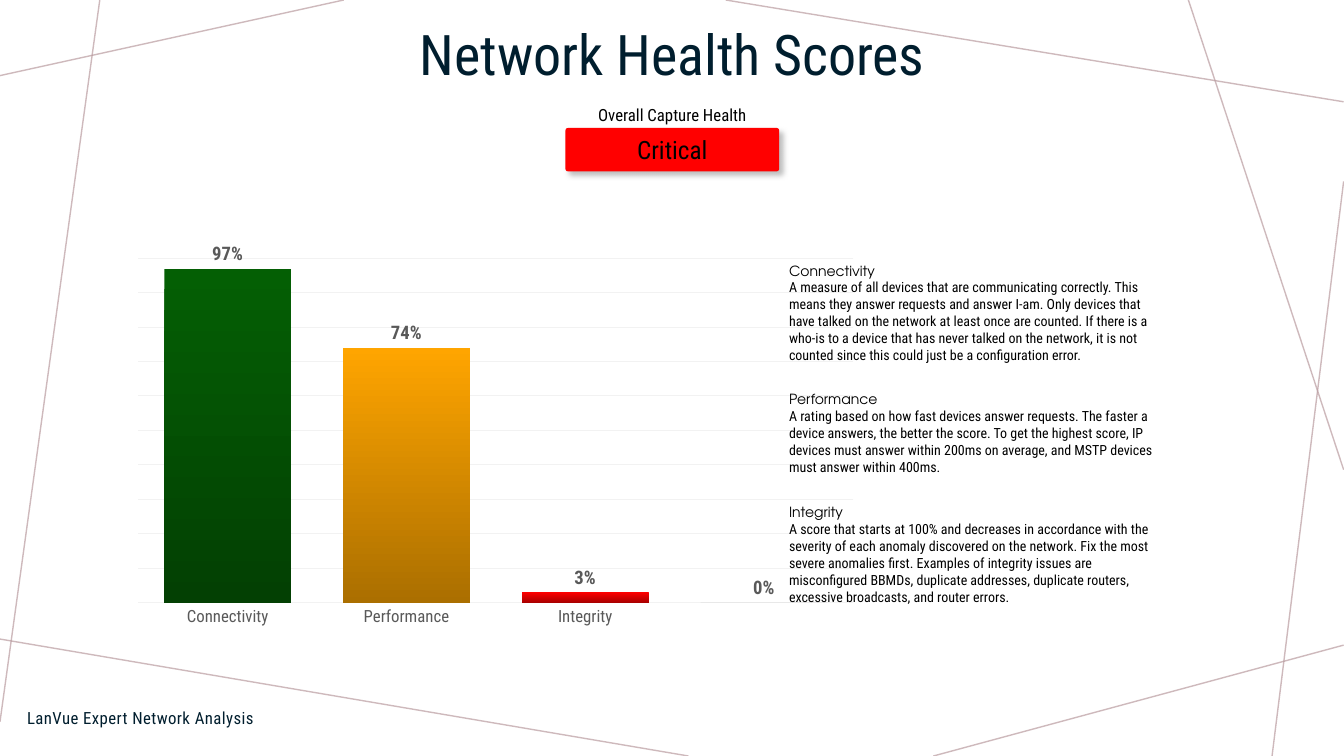
"""Build the network health scores slide."""
import pptx
import pptx.chart.data
import pptx.dml.color
import pptx.enum.chart
import pptx.enum.shapes
import pptx.enum.text
import pptx.oxml
import pptx.oxml.ns
import pptx.util
from lxml import etree

Inches = pptx.util.Inches
Pt = pptx.util.Pt
qn = pptx.oxml.ns.qn
FONT = "Roboto Condensed"
HEAD = "TeX Gyre Adventor"
COLORS = {
    "navy": "001E2E", "black": "000000", "gray": "595959", "mauve": "BA9CA0",
    "grid": "F2F2F2", "red": "FF0000", "shade": "BFBFBF", "bar": "A6A6A6",
}
RAYS = [
    (3.41, 0, 0, 0.75), (0.99, 0, 0, 7.16), (6.83, 7.5, 0, 6.34),
    (13.33, 6.4, 9.26, 7.5), (13.33, 1.8, 12.62, 7.5),
    (13.33, 4.66, 11.79, 0), (13.33, 1.01, 7.2, 0),
]
SCORES = [
    ("Connectivity", 0.97, ("045F04", "034003")),
    ("Performance", 0.74, ("FFA500", "AB6F00")),
    ("Integrity", 0.03, ("FF0000", "AB0000")),
]
NOTES = [
    (2.55, 1.11, "Connectivity",
     "A measure of all devices that are communicating correctly. This means "
     "they answer requests and answer I-am. Only devices that have talked on "
     "the network at least once are counted. If there is a who-is to a device "
     "that has never talked on the network, it is not counted since this could "
     "just be a configuration error."),
    (3.83, 0.94, "Performance",
     "A rating based on how fast devices answer requests. The faster a device "
     "answers, the better the score. To get the highest score, IP devices must "
     "answer within 200ms on average, and MSTP devices must answer within 400ms."),
    (4.95, 1.11, "Integrity",
     "A score that starts at 100% and decreases in accordance with the severity "
     "of each anomaly discovered on the network. Fix the most severe anomalies "
     "first. Examples of integrity issues are misconfigured BBMDs, duplicate "
     "addresses, duplicate routers, excessive broadcasts, and router errors."),
]


def rgb(name):
    """Return a named or hex colour."""
    return pptx.dml.color.RGBColor.from_string(COLORS.get(name, name))


def style(font, size, color, name=FONT, bold=False):
    """Format a font."""
    font.size = Pt(size)
    font.name = name
    font.bold = bold
    font.color.rgb = rgb(color)


def write(para, text, size=10, color="black", name=FONT, center=False, track=0):
    """Put formatted text in a paragraph."""
    align = pptx.enum.text.PP_ALIGN
    para.alignment = align.CENTER if center else align.LEFT
    run = para.add_run()
    run.text = text
    style(run.font, size, color, name)
    if track:
        run.font._element.set("spc", str(track))


def add_box(slide, left, top, width, height, middle=False):
    """Add a wrapping text box and return its frame."""
    box = slide.shapes.add_textbox(
        Inches(left), Inches(top), Inches(width), Inches(height))
    frame = box.text_frame
    frame.word_wrap = True
    if middle:
        frame.vertical_anchor = pptx.enum.text.MSO_ANCHOR.MIDDLE
    return frame


def add_ray(slide, ends):
    """Draw one thin background line."""
    line = slide.shapes.add_connector(
        pptx.enum.shapes.MSO_CONNECTOR.STRAIGHT, *map(Inches, ends))
    line.line.width = Pt(1)
    line.line.color.rgb = rgb("mauve")
    props = line._element.spPr
    tint = next(props.iter(qn("a:srgbClr")))
    etree.SubElement(tint, qn("a:alpha"), val="70000")
    etree.SubElement(props, qn("a:effectLst"))


def add_title(slide, text):
    """Place and fill the title."""
    title = slide.shapes.title
    title.left, title.top = Inches(3.96), Inches(0.17)
    title.width, title.height = Inches(5.42), Inches(0.8)
    title.text_frame.vertical_anchor = pptx.enum.text.MSO_ANCHOR.MIDDLE
    para = title.text_frame.paragraphs[0]
    para.line_spacing = 0.9
    write(para, text, size=40, color="navy", center=True)


def add_badge(slide, text):
    """Draw the status badge with its soft shadow."""
    badge = slide.shapes.add_shape(
        pptx.enum.shapes.MSO_SHAPE.ROUNDED_RECTANGLE,
        Inches(5.61), Inches(1.27), Inches(2.12), Inches(0.43))
    badge.adjustments[0] = 0.056
    badge.fill.solid()
    badge.fill.fore_color.rgb = rgb("red")
    badge.line.fill.background()
    badge.shadow.inherit = False
    glow = badge._element.spPr.find(qn("a:effectLst"))
    drop = etree.SubElement(
        glow, qn("a:outerShdw"), blurRad=str(Pt(4)), dist=str(Pt(4)),
        dir="2700000", algn="tl", rotWithShape="0")
    etree.SubElement(drop, qn("a:srgbClr"), val=COLORS["shade"])
    badge.text_frame.vertical_anchor = pptx.enum.text.MSO_ANCHOR.MIDDLE
    write(badge.text_frame.paragraphs[0], text, size=18, center=True)


def set_plot(chart, **place):
    """Fix the inner plot area and draw a missing score as zero."""
    root = chart._chartSpace.chart
    root.find(qn("c:dispBlanksAs")).set("val", "zero")
    area = root.plotArea
    for old in area.findall(qn("c:layout")):
        area.remove(old)
    layout = etree.Element(qn("c:layout"))
    area.insert(0, layout)
    manual = etree.SubElement(layout, qn("c:manualLayout"))
    parts = {"layoutTarget": "inner", "xMode": "edge", "yMode": "edge", **place}
    for tag, value in parts.items():
        etree.SubElement(manual, qn("c:" + tag), val=str(value))


def add_scores(slide):
    """Add the score column chart, with one unnamed empty slot at its end."""
    enum = pptx.enum.chart
    data = pptx.chart.data.CategoryChartData(number_format="0%")
    data.categories = [name for name, _, _ in SCORES]
    data.add_series("Series 1", [value for _, value, _ in SCORES] + [None])
    chart = slide.shapes.add_chart(
        enum.XL_CHART_TYPE.COLUMN_CLUSTERED, Inches(1.3), Inches(2.19),
        Inches(7.29), Inches(4.32), data).chart
    chart.has_title = False
    chart.has_legend = False
    style(chart.font, 10, "black")
    set_plot(chart, x=0.01, y=0.086, w=0.973, h=0.791)

    base = chart.category_axis
    base.major_tick_mark = enum.XL_TICK_MARK.NONE
    base.format.line.fill.background()
    style(base.tick_labels.font, 12, "gray")
    scale = chart.value_axis
    scale.minimum_scale, scale.maximum_scale = 0, 1
    scale.major_unit = 0.1
    scale.visible = False
    grid = scale.major_gridlines.format.line
    grid.width = Pt(0.75)
    grid.color.rgb = rgb("grid")

    plot = chart.plots[0]
    plot.gap_width = 41
    plot.vary_by_categories = False
    bars = plot.series[0]
    bars.format.fill.solid()
    bars.format.fill.fore_color.rgb = rgb("bar")
    for index, (_, _, shades) in enumerate(SCORES):
        fill = bars.points[index].format.fill
        fill.gradient()
        fill.gradient_angle = 270
        for stop, shade in zip(fill.gradient_stops, shades):
            stop.color.rgb = rgb(shade)
    labels = bars.data_labels
    labels.show_value = True
    labels.position = enum.XL_LABEL_POSITION.OUTSIDE_END
    labels.number_format = "0%"
    labels.number_format_is_linked = False
    style(labels.font, 13.3, "gray", bold=True)


def main():
    """Build and save the slide."""
    deck = pptx.Presentation()
    deck.slide_width, deck.slide_height = Inches(40 / 3), Inches(7.5)
    slide = deck.slides.add_slide(deck.slide_layouts[5])
    for ends in RAYS:
        add_ray(slide, ends)
    add_title(slide, "Network Health Scores")
    foot = add_box(slide, 0.17, 6.92, 4.92, 0.4, middle=True)
    write(foot.paragraphs[0], "LanVue Expert Network Analysis",
          size=12, color="navy", track=30)
    add_scores(slide)
    for top, height, head, body in NOTES:
        frame = add_box(slide, 7.73, top, 3.9, height)
        write(frame.paragraphs[0], head, name=HEAD)
        write(frame.add_paragraph(), body)
    add_badge(slide, "Critical")
    label = add_box(slide, 5.61, 0.99, 2.12, 0.3)
    write(label.paragraphs[0], "Overall Capture Health", size=12, center=True)
    deck.save("out.pptx")


if __name__ == "__main__":
    main()
